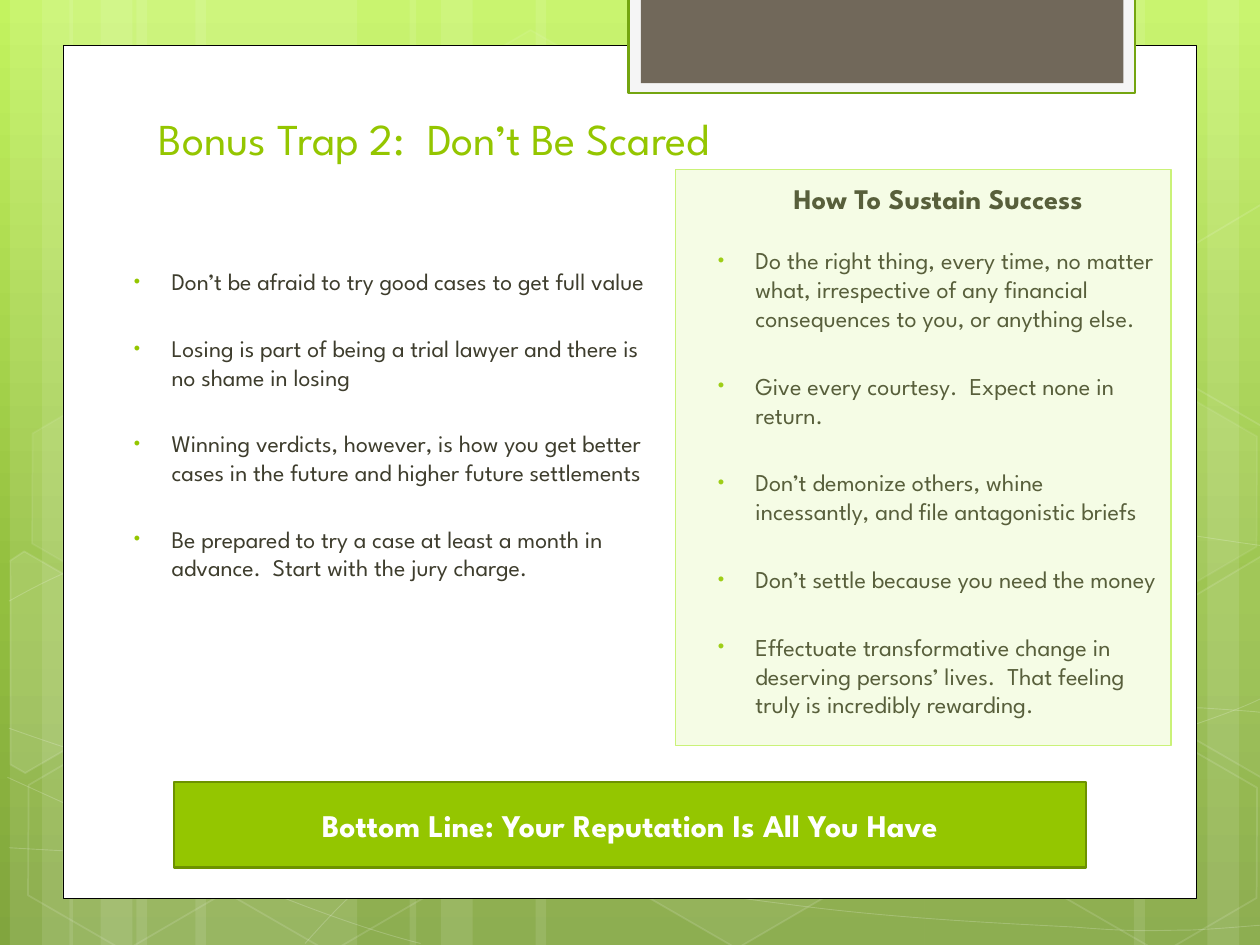
import copy

import pptx
import pptx.dml.color
import pptx.enum.shapes
import pptx.enum.text
import pptx.oxml
import pptx.oxml.ns
import pptx.util

Cm, Pt = pptx.util.Cm, pptx.util.Pt
KIND = pptx.enum.shapes.MSO_SHAPE
ALIGN = pptx.enum.text.PP_ALIGN
ANCHOR = pptx.enum.text.MSO_ANCHOR
LIME, DARK, WHITE, PALE = "94C600", "3E3D2D", "FFFFFF", "CAF278"
FONT = "League Spartan"
WIDE, HIGH = 25.4, 19.05

STRIPES = [(2.75, 4.45), (0.2, 1.27), (0.85, 2.12), (3.94, 4.45), (1.4, 1.27), (2.03, 2.12),
           (18.63, 4.45), (24.34, 1.27), (22.86, 2.12), (10.8, 7.83), (8.26, 1.27), (8.89, 2.12)]
CURVES = [
    [(0.18, 17.09), (1.55, 17.17), (2.92, 17.25), (4.83, 17.22), (6.73, 17.2), (9.09, 17.15),
     (11.63, 16.89), (14.17, 16.64), (17.78, 16.15), (20.12, 15.67), (22.43, 15.19),
     (24.82, 14.43), (25.58, 14)],
    [(0.18, 12.12), (0.91, 11.71), (1.65, 11.33), (3.07, 10.95), (4.52, 10.52), (6.58, 10.01),
     (8.81, 9.83), (11.07, 9.65), (13.82, 9.63), (16.61, 9.83), (19.41, 10.03),
     (24.05, 10.82), (25.58, 11.02)],
    [(0.15, 15.67), (3.23, 17.07), (6.27, 18.47), (8.48, 19.02)],
    [(0.18, 14.68), (0.97, 14.96), (1.78, 15.24), (3.25, 15.65), (4.72, 16.03), (6.93, 16.66),
     (9.07, 17.09), (11.18, 17.53), (13.84, 17.98), (15.95, 18.24), (18.06, 18.52),
     (20.32, 18.62), (21.67, 18.69), (22.99, 18.8), (23.34, 18.75), (24, 18.75),
     (24.66, 18.72), (25.12, 18.67), (25.58, 18.64)],
    [(6.15, 19.02), (6.6, 18.52), (7.06, 18.01), (7.67, 17.55), (8.28, 17.09), (9.14, 16.59),
     (9.86, 16.23), (10.57, 15.88), (11, 15.72), (11.94, 15.47), (12.85, 15.21),
     (14.55, 14.86), (15.44, 14.68), (16.36, 14.5), (16.48, 14.5), (17.27, 14.45),
     (18.06, 14.38), (19.3, 14.3), (20.17, 14.27), (21.06, 14.25), (22.5, 14.27),
     (22.5, 14.27), (23.07, 14.27), (23.64, 14.27), (24.21, 14.27), (24.66, 14.3),
     (25.1, 14.33), (25.32, 14.35), (25.55, 14.38), (25.48, 14.35), (25.55, 14.38)],
]
HEXES = [(8.48, 0.91, 4, 8), (12.62, 14.96, 6, 12), (0.28, 15.01, 0, 12), (0.36, 7.92, 7, 8),
         (4.42, 15.04, 0, 12), (19.13, 11.51, 10, 12), (21.18, 15.06, 0, 12), (21.18, 7.98, 7, 8)]
LEFT = [(0, 0.3), (0.15, 0), (2.4, 0), (3.51, 1.93), (2.4, 3.86), (2.06, 3.86), (0, 0.3)]
RIGHT = [(0, 1.93), (1.08, 0), (1.32, 0), (3.45, 3.67), (3.33, 3.86), (1.1, 3.86), (0, 1.93)]
EDGES = [(LEFT, -0.84, 11.66, 10), (RIGHT, 23.29, 11.28, 4), (RIGHT, 23.29, 4.19, 0)]

POINTS = [
    "Don’t be afraid to try good cases to get full value",
    "Losing is part of being a trial lawyer and there is no shame in losing",
    "Winning verdicts, however, is how you get better cases in the future and higher future settlements",
    "Be prepared to try a case at least a month in advance.  Start with the jury charge.",
]
RULES = [
    "Do the right thing, every time, no matter what, irrespective of any financial consequences to you, or anything else.",
    "Give every courtesy.  Expect none in return.",
    "Don’t demonize others, whine incessantly, and file antagonistic briefs",
    "Don’t settle because you need the money",
    "Effectuate transformative change in deserving persons’ lives.  That feeling truly is incredibly rewarding.",
]


def hue(code):
    """Turn a hex string into a colour."""
    return pptx.dml.color.RGBColor.from_string(code)


def style(item, values):
    """Set each attribute in a dict of format values."""
    for key, value in values.items():
        setattr(item, key, value)


def node(text):
    """Make a drawing element from its tag and attributes."""
    return pptx.oxml.parse_xml(f'<a:{text} {pptx.oxml.ns.nsdecls("a")}/>')


def inset(box, x, y, w, h):
    """Give a box whose corner is offset from that of another."""
    return box[0] + x, box[1] + y, w, h


def paint(shape, fill=None, line=None, width=1, body=100, rim=100):
    """Set the fill and outline of a shape with their opacity."""
    shape.shadow.inherit = False
    if fill and body:
        shape.fill.solid()
        shape.fill.fore_color.rgb = hue(fill)
    else:
        shape.fill.background()
    if line:
        shape.line.color.rgb = hue(line)
        shape.line.width = Pt(width)
    else:
        shape.line.fill.background()
    for where, share in (("p:spPr/a:solidFill/a:srgbClr", body), ("p:spPr/a:ln//a:srgbClr", rim)):
        if share < 100:
            for tint in shape.element.xpath(where):
                tint.append(node(f'alpha val="{share * 1000}"'))


def block(slide, box, kind=KIND.RECTANGLE, **look):
    """Add a painted preset shape."""
    shape = slide.shapes.add_shape(kind, *map(Cm, box))
    paint(shape, **look)
    return shape


def trace(slide, box, dots, close, **look):
    """Add a painted outline through points in a box."""
    spots = [(Cm(box[0] + x), Cm(box[1] + y)) for x, y in dots]
    pen = slide.shapes.build_freeform(*spots[0])
    pen.add_line_segments(spots[1:], close=close)
    shape = pen.convert_to_shape()
    paint(shape, **look)
    return shape


def bend(shape):
    """Join each three segments of an outline into one curve."""
    lines = shape.element.xpath(".//a:lnTo")
    for first in range(0, len(lines), 3):
        curve = node("cubicBezTo")
        lines[first].addprevious(curve)
        for line in lines[first:first + 3]:
            curve.append(line[0])
            line.getparent().remove(line)


def write(para, text, size, code, bold=False, **form):
    """Fill a paragraph with one formatted run."""
    run = para.add_run()
    run.text = text
    style(run.font, {"name": FONT, "size": Pt(size), "bold": bold})
    run.font.color.rgb = hue(code)
    style(para, form)


def bullet(para):
    """Give a paragraph a hanging green bullet."""
    props = para._p.get_or_add_pPr()
    props.set("marL", str(Cm(0.96)))
    props.set("indent", str(Cm(-0.76)))
    tint = node("buClr")
    tint.append(node(f'srgbClr val="{LIME}"'))
    props.append(tint)
    for part in ('buSzPct val="76000"', 'buFont typeface="Arial"', 'buChar char="•"'):
        props.append(node(part))


def listing(slide, box, items, size, head=None):
    """Place a bullet list with an optional heading."""
    frame = slide.shapes.add_textbox(*map(Cm, box)).text_frame
    frame.word_wrap = True
    para, gap = frame.paragraphs[0], 2.7
    if head:
        write(para, head, 16.2, DARK, True, alignment=ALIGN.CENTER, space_before=Pt(3.2))
        para._p.get_or_add_pPr().set("marL", str(Cm(0.18)))
        para, gap = frame.add_paragraph(), 17.3
    for index, item in enumerate(items):
        if index:
            para, gap = frame.add_paragraph(), size * 1.6
        write(para, item, size, DARK, space_before=Pt(gap))
        bullet(para)


def backdrop(slide, box):
    """Draw the gradient, stripes, curves and hexagons."""
    fill = slide.background.fill
    fill.gradient()
    fill.gradient_angle = 270
    stops = slide.element.xpath(".//p:bgPr//a:gsLst")[0]
    stops.insert(1, copy.deepcopy(stops[0]))
    for stop, (spot, code) in zip(fill.gradient_stops,
                                  [(0, "C3F35F"), (0.62, "93BF3F"), (1, "81A53E")]):
        stop.position = spot
        stop.color.rgb = hue(code)
    for x, wide in STRIPES:
        block(slide, inset(box, x, 0, wide, box[3]), fill=WHITE, body=10)
    for dots in CURVES:
        bend(trace(slide, box, dots, False, line=WHITE, width=0.5, rim=20))
    for x, y, body, rim in HEXES:
        shape = block(slide, inset(box, x, y, 4.45, 3.86), KIND.HEXAGON,
                      fill=WHITE, line=WHITE, body=body, rim=rim)
        shape.adjustments[0] = 0.285
        shape.rotation = 30
    for dots, x, y, body in EDGES:
        shape = trace(slide, inset(box, x, y, 3.5, 3.86), dots, True,
                      fill=WHITE, line=WHITE, body=body, rim=12)
        shape.rotation = 30


def tab(slide, box):
    """Draw the framed tab that hangs from the top edge."""
    block(slide, box, fill="F5F5F5", line="74A510", width=1.25)
    block(slide, inset(box, 0.25, 0, box[2] - 0.48, box[3] - 0.2), fill="71685A")


def title(slide, box, text):
    """Place the title above the white card."""
    shape = slide.shapes.title
    slide.shapes.element.append(shape.element)
    style(shape, dict(zip(("left", "top", "width", "height"), map(Cm, box))))
    style(shape.text_frame, {"vertical_anchor": ANCHOR.BOTTOM, "word_wrap": True})
    write(shape.text_frame.paragraphs[0], text, 25.2, LIME, alignment=ALIGN.LEFT)


def panel(slide, box):
    """Place the list of rules under a light green veil."""
    listing(slide, inset(box, 0.4, 0.11, 9.6, 11.5), RULES, 13.8, "How To Sustain Success")
    block(slide, box, fill=PALE, line=PALE, width=0.75, body=19)


def banner(slide, box, text):
    """Place the closing message."""
    shape = block(slide, box, fill=LIME, line="6D9200", width=1.25)
    style(shape.text_frame, {"vertical_anchor": ANCHOR.MIDDLE, "word_wrap": True})
    write(shape.text_frame.paragraphs[0], text, 18, WHITE, True, alignment=ALIGN.CENTER)


def main():
    """Build and save the slide."""
    deck = pptx.Presentation()
    style(deck, {"slide_width": Cm(WIDE), "slide_height": Cm(HIGH)})
    slide = deck.slides.add_slide(deck.slide_layouts[5])
    backdrop(slide, (0, 0, WIDE, HIGH))
    block(slide, (1.27, 0.92, 22.86, 17.19), fill=WHITE, line="000000", width=0.5)
    tab(slide, (12.67, -0.05, 10.21, 1.93))
    title(slide, (2.95, 2.26, 19.51, 1.19), "Bonus Trap 2:  Don’t Be Scared")
    listing(slide, (2.25, 5.26, 11.1, 7.49), POINTS, 13.6)
    panel(slide, (13.62, 3.42, 9.99, 11.61))
    banner(slide, (3.51, 15.77, 18.38, 1.72), "Bottom Line: Your Reputation Is All You Have")
    deck.save("out.pptx")


if __name__ == "__main__":
    main()
